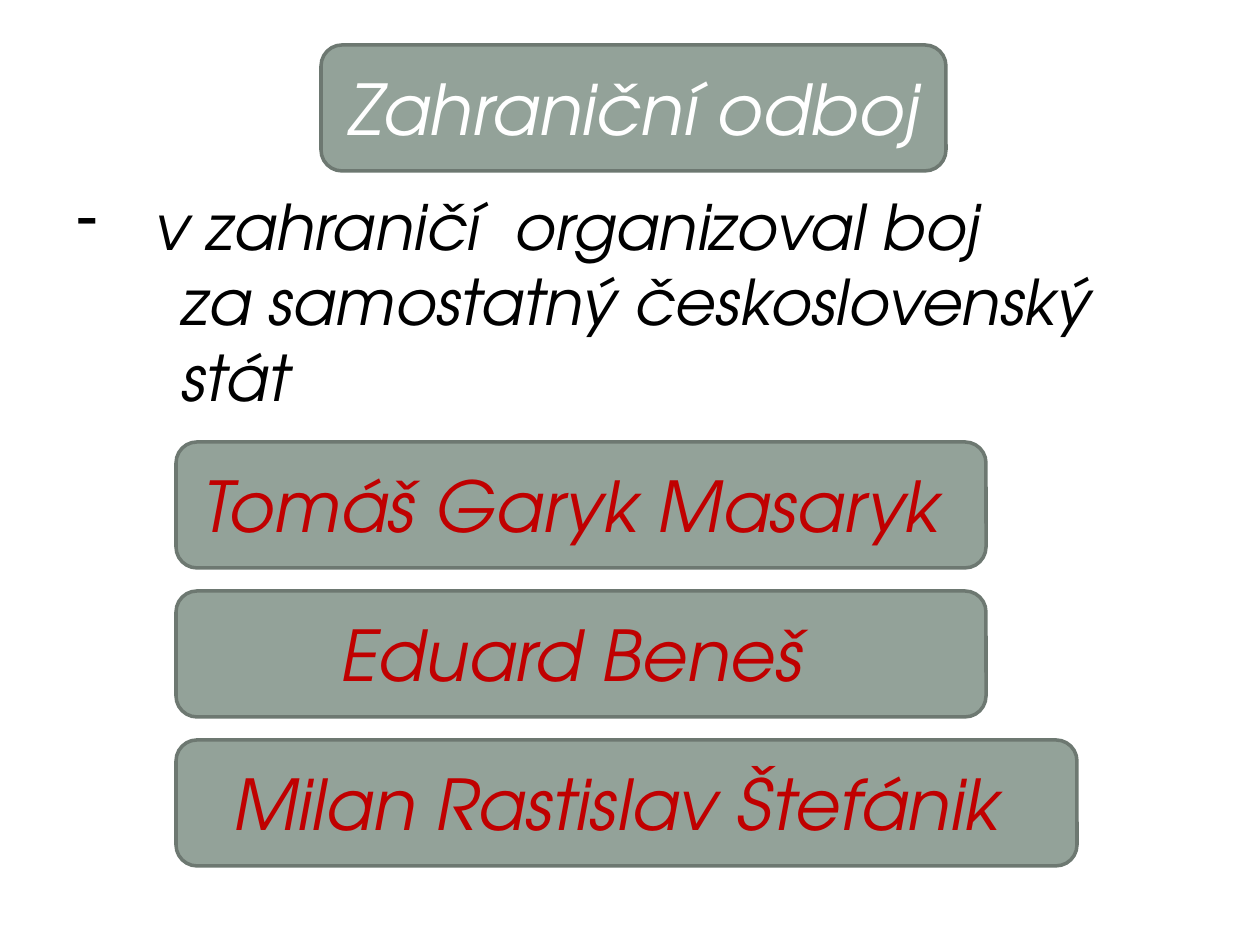
from dataclasses import dataclass

from lxml import etree
from pptx import Presentation
from pptx import util as u
from pptx.dml.color import RGBColor
from pptx.enum import shapes, text
from pptx.oxml import ns

PX = u.Inches(1) / 126


@dataclass(frozen=True)
class Theme:
    """Colours, typeface and type sizes of the slide."""
    panel: str = "93A299"
    edge: str = "6D7871"
    title: str = "FFFFFF"
    name: str = "C00000"
    body: str = "000000"
    face: str = "TeX Gyre Adventor"
    panel_size: int = 40
    body_size: int = 36


THEME = Theme()


def px(length):
    """Turn a length in px into EMU."""
    return u.Emu(round(length * PX))


def write(paragraph, wording, size, colour):
    """Put one italic run into a paragraph."""
    run = paragraph.add_run()
    run.text = wording
    for key, value in {"name": THEME.face, "size": u.Pt(size), "italic": True}.items():
        setattr(run.font, key, value)
    run.font.color.rgb = RGBColor.from_string(colour)


def panel(slide, box, wording, colour):
    """Draw a rounded panel with one centred line of text."""
    plate = slide.shapes.add_shape(
        shapes.MSO_SHAPE.ROUNDED_RECTANGLE, *map(px, box))
    plate.shadow.inherit = False
    plate.fill.solid()
    plate.fill.fore_color.rgb = RGBColor.from_string(THEME.panel)
    plate.line.color.rgb = RGBColor.from_string(THEME.edge)
    plate.line.width = u.Pt(2)
    frame = plate.text_frame
    for key, value in {"word_wrap": True, "vertical_anchor": text.MSO_ANCHOR.MIDDLE}.items():
        setattr(frame, key, value)
    frame.paragraphs[0].alignment = text.PP_ALIGN.CENTER
    write(frame.paragraphs[0], wording, THEME.panel_size, colour)


def statement(slide, box, lines):
    """Write a dashed first line followed by indented lines."""
    frame = slide.shapes.add_textbox(*map(px, box)).text_frame
    frame.word_wrap = True
    for number, line in enumerate(lines):
        paragraph = frame.paragraphs[0] if number == 0 else frame.add_paragraph()
        write(paragraph, line, THEME.body_size, THEME.body)
        properties = paragraph._p.get_or_add_pPr()
        margin, indent = (105, 0) if number else (78, -78)
        properties.set("marL", str(px(margin)))
        properties.set("indent", str(px(indent)))
        if number == 0:
            etree.SubElement(properties, ns.qn("a:buChar")).set("char", "-")


def leaders(slide, box, names, pitch):
    """Stack one panel per name, each with its own width."""
    left, top, height = box
    for row, (name, width) in enumerate(names):
        panel(slide, (left, top + row * pitch, width, height), name, THEME.name)


def main():
    """Build and save the slide."""
    deck = Presentation()
    deck.slide_width, deck.slide_height = px(1260), px(945)
    slide = deck.slides.add_slide(deck.slide_layouts[6])
    panel(slide, (321, 45, 625, 126), "Zahraniční odboj ", THEME.title)
    statement(slide, (64, 181, 1060, 242), [
        "v zahraničí  organizoval boj",
        "za samostatný československý",
        "stát",
    ])
    leaders(slide, (176, 442, 126), [
        ("Tomáš Garyk Masaryk ", 810),
        ("Eduard Beneš ", 810),
        ("Milan Rastislav Štefánik ", 901),
    ], pitch=149)
    deck.save("out.pptx")


if __name__ == "__main__":
    main()
